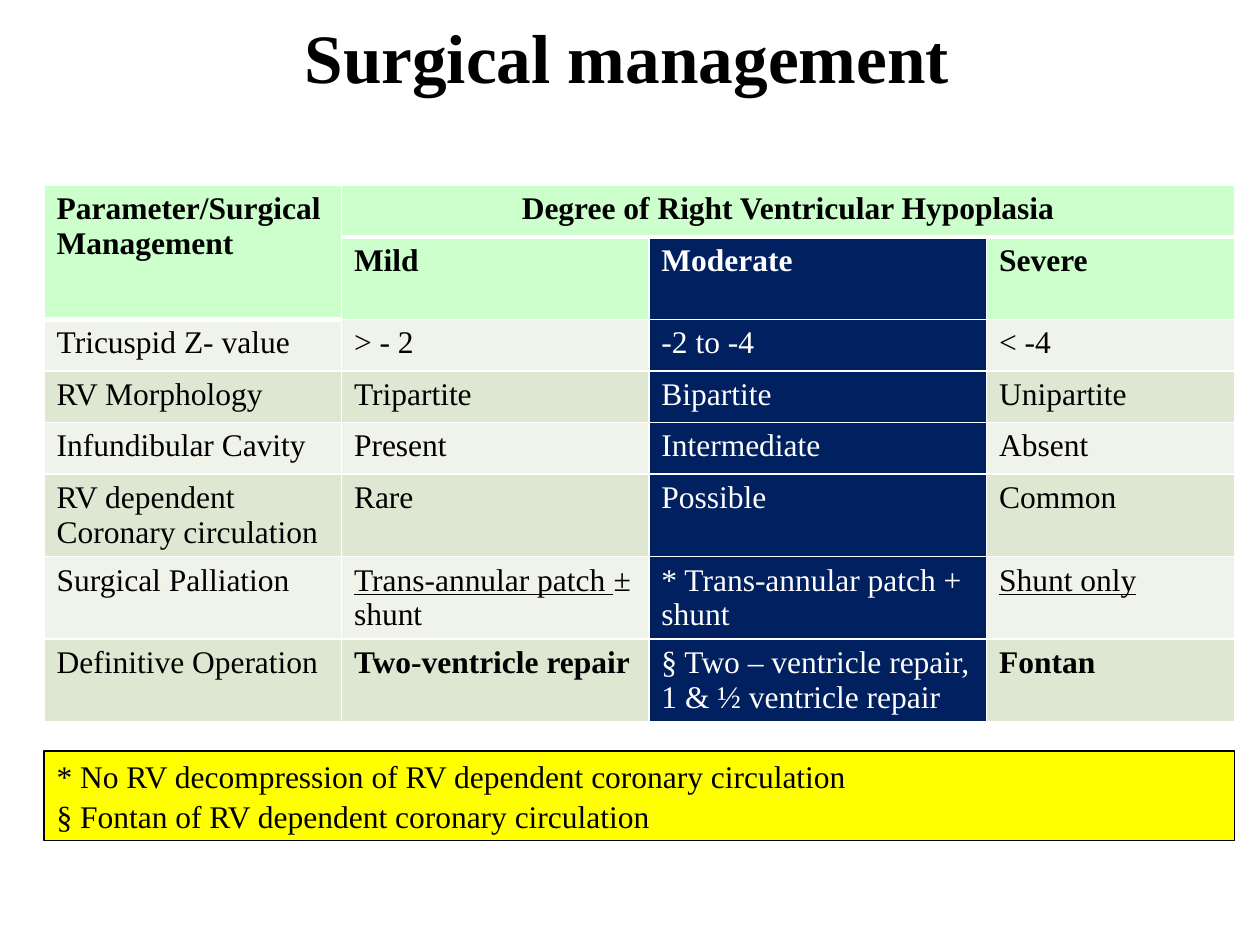
from lxml import etree
from pptx import Presentation
from pptx.dml.color import RGBColor
from pptx.enum.shapes import MSO_SHAPE
from pptx.enum.text import MSO_ANCHOR, PP_ALIGN
from pptx.oxml.ns import qn
from pptx.util import Inches, Pt

RECT = MSO_SHAPE.RECTANGLE
MIDDLE = MSO_ANCHOR.MIDDLE
LEFT, CENTER = PP_ALIGN.LEFT, PP_ALIGN.CENTER
FONT = "Times New Roman"
COLORS = {"black": "000000", "white": "FFFFFF", "header": "CCFFCC", "navy": "002060",
          "light": "EFF3EA", "dark": "DEE7D1", "yellow": "FFFF00"}
COL_WIDTHS = [2.36, 2.44, 2.68, 1.97]
ROW_HEIGHT = 0.41
MODERATE = 2  # highlighted column
ROWS = [
    ["Parameter/Surgical Management", "Degree of Right Ventricular Hypoplasia", "", ""],
    ["", "Mild", "Moderate", "Severe"],
    ["Tricuspid Z- value", "> - 2", "-2 to -4", "< -4"],
    ["RV Morphology", "Tripartite", "Bipartite", "Unipartite"],
    ["Infundibular Cavity", "Present", "Intermediate", "Absent"],
    ["RV dependent Coronary circulation", "Rare", "Possible", "Common"],
    ["Surgical Palliation", "Trans-annular patch ± shunt", "* Trans-annular patch + shunt",
     "Shunt only"],
    ["Definitive Operation", "Two-ventricle repair",
     "§ Two – ventricle repair, 1 & ½ ventricle repair", "Fontan"],
]
UNDERLINED = ["Trans-annular patch ", "Shunt only"]
BOLD = ["Two-ventricle repair", "Fontan"]
NOTES = ["* No RV decompression of RV dependent coronary circulation",
         "§ Fontan of RV dependent coronary circulation"]


def rgb(name):
    return RGBColor.from_string(COLORS[name])


def style(p, size, color="black", bold=False, align=LEFT):
    p.alignment = align
    p.font.name = FONT
    p.font.size = Pt(size)
    p.font.bold = bold
    p.font.color.rgb = rgb(color)


def place(sp, box):
    sp.left, sp.top, sp.width, sp.height = (Inches(v) for v in box)


def set_borders(cell, bottom):
    """White cell edges, with the given bottom width in points."""
    tcPr = cell._tc.get_or_add_tcPr()
    for i, (side, width) in enumerate([("L", 1), ("R", 1), ("T", 1), ("B", bottom)]):
        ln = etree.Element(qn(f"a:ln{side}"), w=str(Pt(width)))
        fill = etree.SubElement(ln, qn("a:solidFill"))
        etree.SubElement(fill, qn("a:srgbClr"), val=COLORS["white"])
        tcPr.insert(i, ln)


def add_text(p, text):
    """Adds the text as runs, underlining a listed opening phrase."""
    lead = next((u for u in UNDERLINED if text.startswith(u)), "")
    for part in filter(None, [lead, text[len(lead):]]):
        r = p.add_run()
        r.text = part
        if part == lead:
            r.font.underline = True


def add_title(slide, box):
    sp = slide.shapes.title
    place(sp, box)
    tf = sp.text_frame
    tf.text = "Surgical management "
    tf.vertical_anchor = MIDDLE
    p = tf.paragraphs[0]
    style(p, 39.6, bold=True, align=CENTER)
    p.line_spacing = 0.9


def add_management_table(slide, box):
    frame = slide.shapes.add_table(len(ROWS), len(COL_WIDTHS), *(Inches(v) for v in box))
    table = frame.table
    for col, width in zip(table.columns, COL_WIDTHS):
        col.width = Inches(width)
    for row in table.rows:
        row.height = Inches(ROW_HEIGHT)
    frame.height = Inches(box[3])
    table.cell(0, 0).merge(table.cell(1, 0))
    table.cell(0, 1).merge(table.cell(0, 3))

    for i, texts in enumerate(ROWS):
        header = i < 2
        band = "header" if header else ("light", "dark")[i % 2]
        for j, text in enumerate(texts):
            cell = table.cell(i, j)
            highlighted = j == MODERATE and i > 0
            set_borders(cell, 3 if i == 0 or (i, j) == (1, 0) else 1)
            cell.fill.solid()
            cell.fill.fore_color.rgb = rgb("navy" if highlighted else band)
            p = cell.text_frame.paragraphs[0]
            add_text(p, text)
            style(p, 18, "white" if highlighted else "black", header or text in BOLD,
                  CENTER if (i, j) == (0, 1) else LEFT)


def add_notes_box(slide, box):
    sp = slide.shapes.add_shape(RECT, *(Inches(v) for v in box))
    sp.shadow.inherit = False
    sp.fill.solid()
    sp.fill.fore_color.rgb = rgb("yellow")
    sp.line.color.rgb = rgb("black")
    sp.line.width = Pt(0.75)
    tf = sp.text_frame
    tf.word_wrap = True
    tf.vertical_anchor = MIDDLE
    tf.text = "\n".join(NOTES)
    for p in tf.paragraphs:
        style(p, 18)
    tf.paragraphs[1].space_before = Pt(1.5)


def main():
    prs = Presentation()
    prs.slide_width, prs.slide_height = Inches(10), Inches(7.5)
    slide = prs.slides.add_slide(prs.slide_layouts[5])
    add_title(slide, (0.28, 0.13, 9.53, 0.71))
    add_management_table(slide, (0.35, 1.47, 9.45, 4.13))
    add_notes_box(slide, (0.35, 5.96, 9.45, 0.71))
    prs.save("out.pptx")


if __name__ == "__main__":
    main()
